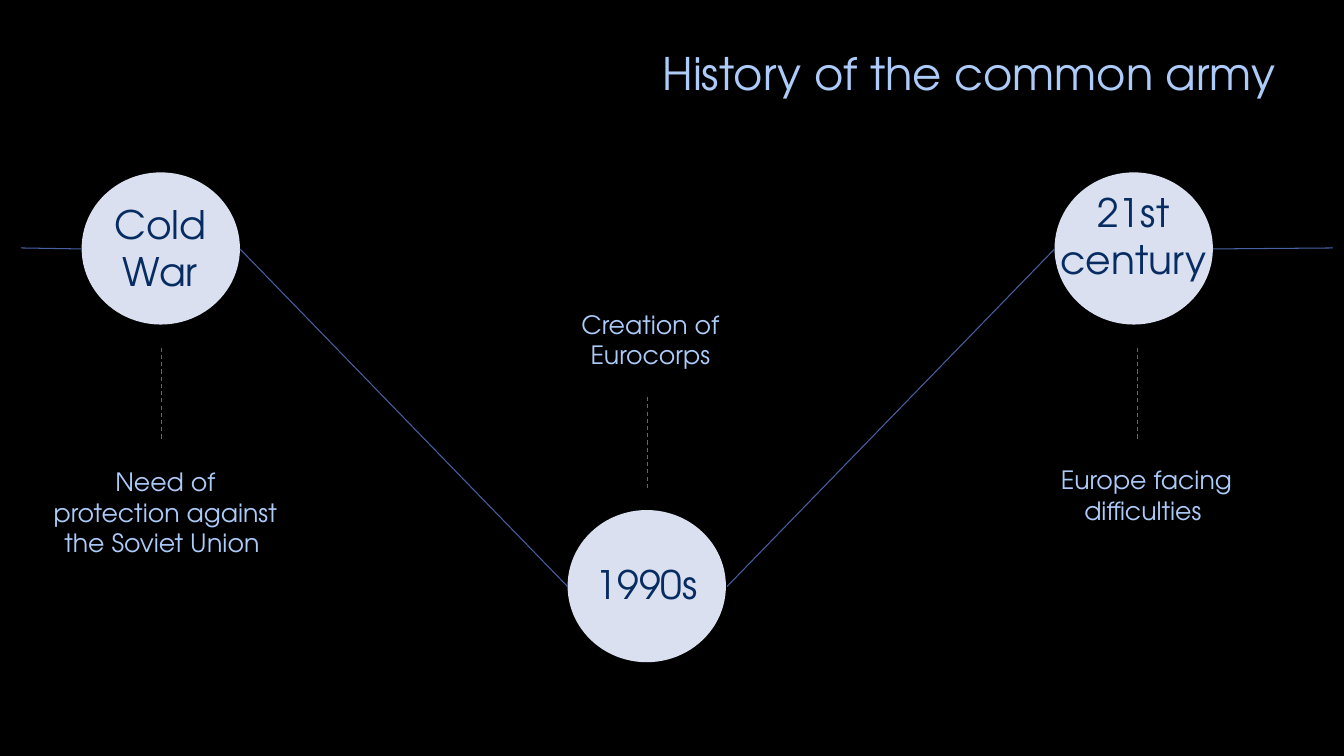
from dataclasses import dataclass

from lxml import etree
from pptx import Presentation
from pptx import util as u
from pptx.dml.color import RGBColor
from pptx.enum import dml, shapes, text
from pptx.oxml import ns

PX = 9144
FONT = "TeX Gyre Adventor"
COLOURS = {
    "background": "000000",
    "light": "ACCBF9",
    "circle": "DAE0EF",
    "period": "072C62",
    "path": "4761A4",
    "dash": "4A66AC",
}
CIRCLE_WIDTH, CIRCLE_HEIGHT = 157, 151
DASH_LENGTH = 91
LABEL_WIDTH = 244


@dataclass(frozen=True)
class Caption:
    words: str
    left: int
    top: int
    width: int
    height: int
    size: int
    colour: str


@dataclass(frozen=True)
class Circle:
    left: int
    top: int


@dataclass(frozen=True)
class Line:
    x1: int
    y1: int
    x2: int
    y2: int
    colour: str = "path"
    dashed: bool = False


def px(length: int) -> u.Emu:
    return u.Emu(length * PX)


def rgb(name: str) -> RGBColor:
    return RGBColor.from_string(COLOURS[name])


def write(box, caption: Caption, align) -> None:
    frame = box.text_frame
    frame.word_wrap = True
    frame.vertical_anchor = text.MSO_ANCHOR.TOP
    para = frame.paragraphs[0]
    para.alignment = align
    span = para.add_run()
    span.text = caption.words
    span.font.name = FONT
    span.font.size = u.Pt(caption.size)
    span.font.color.rgb = rgb(caption.colour)


def place(box, caption: Caption) -> None:
    box.left, box.top = px(caption.left), px(caption.top)
    box.width, box.height = px(caption.width), px(caption.height)


def draw_title(page, caption: Caption) -> None:
    box = page.shapes.title
    place(box, caption)
    write(box, caption, text.PP_ALIGN.RIGHT)
    box.text_frame.auto_size = text.MSO_AUTO_SIZE.NONE


def draw_caption(page, caption: Caption) -> None:
    box = page.shapes.add_textbox(0, 0, 0, 0)
    place(box, caption)
    write(box, caption, text.PP_ALIGN.CENTER)
    box.text_frame.auto_size = text.MSO_AUTO_SIZE.SHAPE_TO_FIT_TEXT


def draw_circle(page, circle: Circle) -> None:
    oval = page.shapes.add_shape(
        shapes.MSO_SHAPE.OVAL,
        px(circle.left), px(circle.top), px(CIRCLE_WIDTH), px(CIRCLE_HEIGHT),
    )
    oval.shadow.inherit = False
    oval.fill.solid()
    oval.fill.fore_color.rgb = rgb("circle")
    oval.line.fill.background()


def draw_line(page, line: Line) -> None:
    connector = page.shapes.add_connector(
        shapes.MSO_CONNECTOR.STRAIGHT,
        px(line.x1), px(line.y1), px(line.x2), px(line.y2),
    )
    connector.line.color.rgb = rgb(line.colour)
    connector.line.width = u.Pt(0.75)
    if line.dashed:
        connector.line.dash_style = dml.MSO_LINE.DASH
    etree.SubElement(connector._element.spPr, ns.qn("a:effectLst"))


def dash(x: int, y: int) -> Line:
    return Line(x, y, x, y + DASH_LENGTH, "dash", True)


def period(words: str, left: int, top: int, width: int, height: int) -> Caption:
    return Caption(words, left, top, width, height, 28, "period")


def label(words: str, left: int, top: int, height: int) -> Caption:
    return Caption(words, left, top, LABEL_WIDTH, height, 18, "light")


TITLE = Caption("History of the common army ", 621, 40, 667, 64, 32, "light")
CIRCLES = [Circle(81, 171), Circle(563, 506), Circle(1046, 171)]
LINES = [
    Line(21, 246, 81, 247),
    Line(238, 247, 563, 582),
    Line(721, 582, 1046, 247),
    Line(1203, 247, 1322, 246),
    dash(160, 345),
    dash(642, 394),
    dash(1128, 345),
]
CAPTIONS = [
    period("Cold War", 101, 194, 116, 104),
    period("1990s", 563, 551, 157, 57),
    period("21st century ", 1039, 182, 170, 104),
    label("Need of protection against the Soviet Union ", 42, 458, 101),
    label("Creation of Eurocorps", 523, 302, 71),
    label("Europe facing difficulties ", 1015, 456, 71),
]


def main() -> None:
    deck = Presentation()
    deck.slide_width, deck.slide_height = px(1333), px(750)
    page = deck.slides.add_slide(deck.slide_layouts.get_by_name("Title Only"))
    page.background.fill.solid()
    page.background.fill.fore_color.rgb = rgb("background")
    draw_title(page, TITLE)
    for circle in CIRCLES:
        draw_circle(page, circle)
    for line in LINES:
        draw_line(page, line)
    for caption in CAPTIONS:
        draw_caption(page, caption)
    deck.save("out.pptx")


if __name__ == "__main__":
    main()
